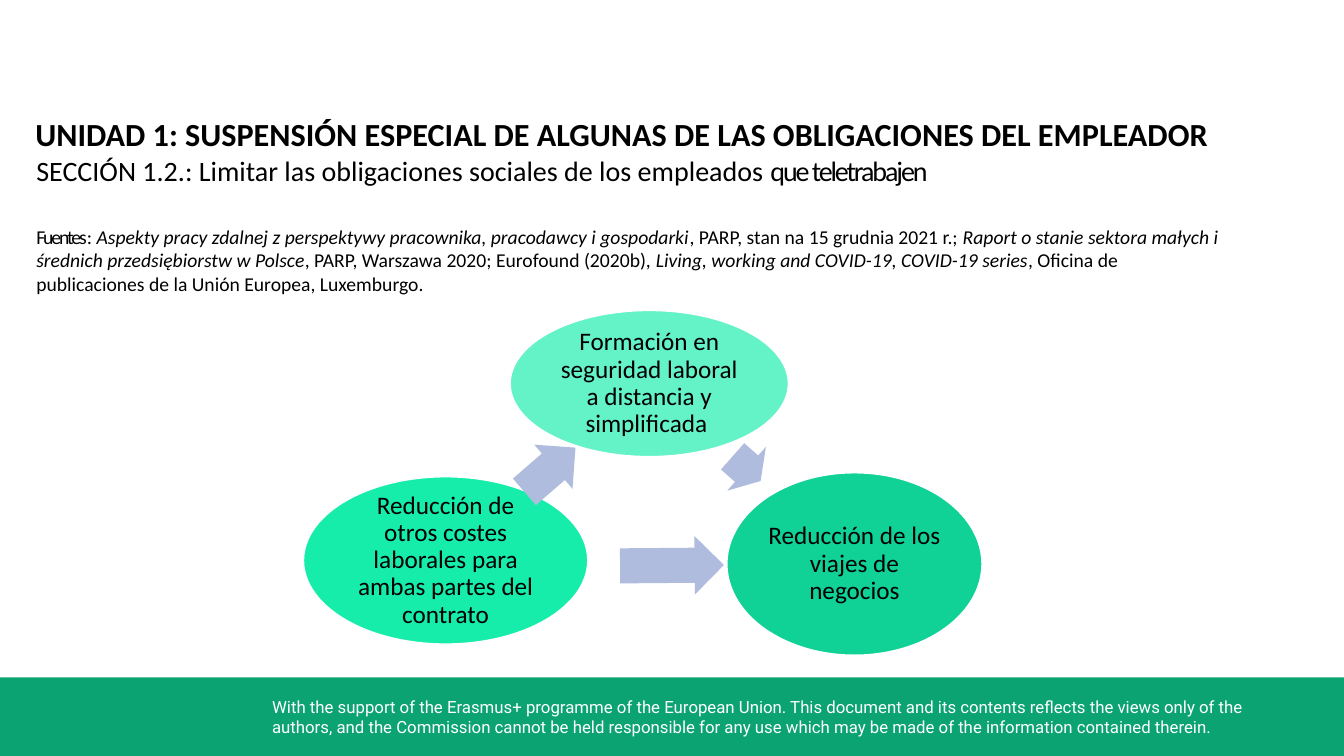
from dataclasses import dataclass

from pptx import Presentation
from pptx.dml.color import RGBColor
from pptx.enum.shapes import MSO_SHAPE
from pptx.enum.text import MSO_ANCHOR, PP_ALIGN
from pptx.util import Inches, Pt

OVAL = MSO_SHAPE.OVAL
ARROW = MSO_SHAPE.RIGHT_ARROW
RECT = MSO_SHAPE.RECTANGLE
TOP = MSO_ANCHOR.TOP
MIDDLE = MSO_ANCHOR.MIDDLE
LEFT = PP_ALIGN.LEFT
CENTER = PP_ALIGN.CENTER
JUSTIFY = PP_ALIGN.JUSTIFY


@dataclass
class Node:
    box: tuple[float, float, float, float]
    fill: str
    label: str


@dataclass
class Arrow:
    box: tuple[float, float, float, float]
    turn: float


@dataclass
class Run:
    text: str
    italic: bool = False
    track: float = 0


NODES = [
    Node((5.06, 3.08, 2.76, 1.45), "63F3C6",
         "Formación en seguridad laboral a distancia y simplificada "),
    Node((7.21, 4.69, 2.53, 1.81), "10D296",
         "Reducción de los viajes de negocios"),
    Node((3.01, 4.73, 2.82, 1.66), "17EDAB",
         "Reducción de otros costes laborales para ambas partes del contrato"),
]
ARROWS = [
    Arrow((7.22, 4.36, 0.37, 0.58), 41.4),
    Arrow((6.15, 5.32, 1.03, 0.58), 359.5),
    Arrow((5.12, 4.37, 0.67, 0.58), 319.1),
]
TITLE = [Run("UNIDAD 1: SUSPENSIÓN ESPECIAL DE ALGUNAS DE LAS OBLIGACIONES "
             "DEL EMPLEADOR")]
SECTION = [
    Run("SECCIÓN 1.2.: Limitar las obligaciones sociales de los empleados "),
    Run("que teletrabajen", track=-1.5),
]
SOURCES = [
    Run("Fuentes", track=-1.5),
    Run(": "),
    Run("Aspekty pracy zdalnej z perspektywy pracownika, pracodawcy i "
        "gospodarki", italic=True),
    Run(", PARP, stan na 15 grudnia 2021 r.; "),
    Run("Raport o stanie sektora małych i średnich przedsiębiorstw w Polsce",
        italic=True),
    Run(", PARP, Warszawa 2020; Eurofound (2020b), "),
    Run("Living, working and COVID-19, COVID-19 series", italic=True),
    Run(", Oficina de publicaciones de la Unión Europea, Luxemburgo."),
]
NOTICE = [Run("With the support of the Erasmus+ programme of the European "
              "Union. This document and its contents reflects the views only "
              "of the authors, and the Commission cannot be held responsible "
              "for any use which may be made of the information contained "
              "therein.")]


def color(code: str) -> RGBColor:
    return RGBColor.from_string(code)


def setup(frame, pads: tuple[float, float, float, float], anchor=TOP):
    frame.word_wrap = True
    frame.vertical_anchor = anchor
    (frame.margin_left, frame.margin_top,
     frame.margin_right, frame.margin_bottom) = map(Inches, pads)
    return frame


def write(para, runs: list[Run], *, size: float, font: str = "Calibri",
          ink: str = "000000", bold: bool = False, align=LEFT,
          before: float = 0, line: float = 1, indent: float = 0) -> None:
    para.alignment = align
    para.line_spacing = line
    para.space_before = Pt(before)
    para._p.get_or_add_pPr().set("marL", str(Inches(indent)))
    for item in runs:
        run = para.add_run()
        run.text = item.text
        run.font.name = font
        run.font.size = Pt(size)
        run.font.bold = bold
        run.font.italic = item.italic
        run.font.color.rgb = color(ink)
        if item.track:
            run._r.get_or_add_rPr().set("spc", str(int(item.track * 100)))


def draw(slide, kind, box: tuple[float, float, float, float], fill: str,
         edge: str = ""):
    shape = slide.shapes.add_shape(kind, *map(Inches, box))
    shape.shadow.inherit = False
    shape.fill.solid()
    shape.fill.fore_color.rgb = color(fill)
    if edge:
        shape.line.color.rgb = color(edge)
        shape.line.width = Pt(1)
    else:
        shape.line.fill.background()
    return shape


def add_node(slide, node: Node) -> None:
    shape = draw(slide, OVAL, node.box, node.fill, "FFFFFF")
    frame = setup(shape.text_frame, (0.03,) * 4, MIDDLE)
    write(frame.paragraphs[0], [Run(node.label)], size=18, align=CENTER,
          line=0.9)


def add_arrow(slide, arrow: Arrow) -> None:
    shape = draw(slide, ARROW, arrow.box, "B0BCDE")
    shape.adjustments[0] = 0.6
    shape.adjustments[1] = 0.5
    shape.rotation = arrow.turn


def add_foot(slide) -> None:
    draw(slide, RECT, (0, 6.72, 13.33, 0.78), "0CA373")
    box = slide.shapes.add_textbox(*map(Inches, (2.6, 6.86, 10.42, 0.5)))
    frame = setup(box.text_frame, (0.1, 0.05, 0.1, 0.05))
    write(frame.paragraphs[0], NOTICE, size=12, font="Roboto", ink="FFFFFF")


def add_head(slide) -> None:
    box = slide.shapes.add_textbox(*map(Inches, (0.35, 1.12, 11.82, 2.56)))
    frame = setup(box.text_frame, (0, 0.01, 0, 0))
    write(frame.paragraphs[0], TITLE, size=23, bold=True, align=JUSTIFY)
    write(frame.add_paragraph(), SECTION, size=20, before=1, indent=0.01)
    write(frame.add_paragraph(), SOURCES, size=14, before=26.4, indent=0.01)


def main() -> None:
    deck = Presentation()
    deck.slide_width = Inches(13.33)
    deck.slide_height = Inches(7.5)
    slide = deck.slides.add_slide(deck.slide_layouts[6])
    add_foot(slide)
    add_head(slide)
    for node in NODES:
        add_node(slide, node)
    for arrow in ARROWS:
        add_arrow(slide, arrow)
    deck.save("out.pptx")


if __name__ == "__main__":
    main()
